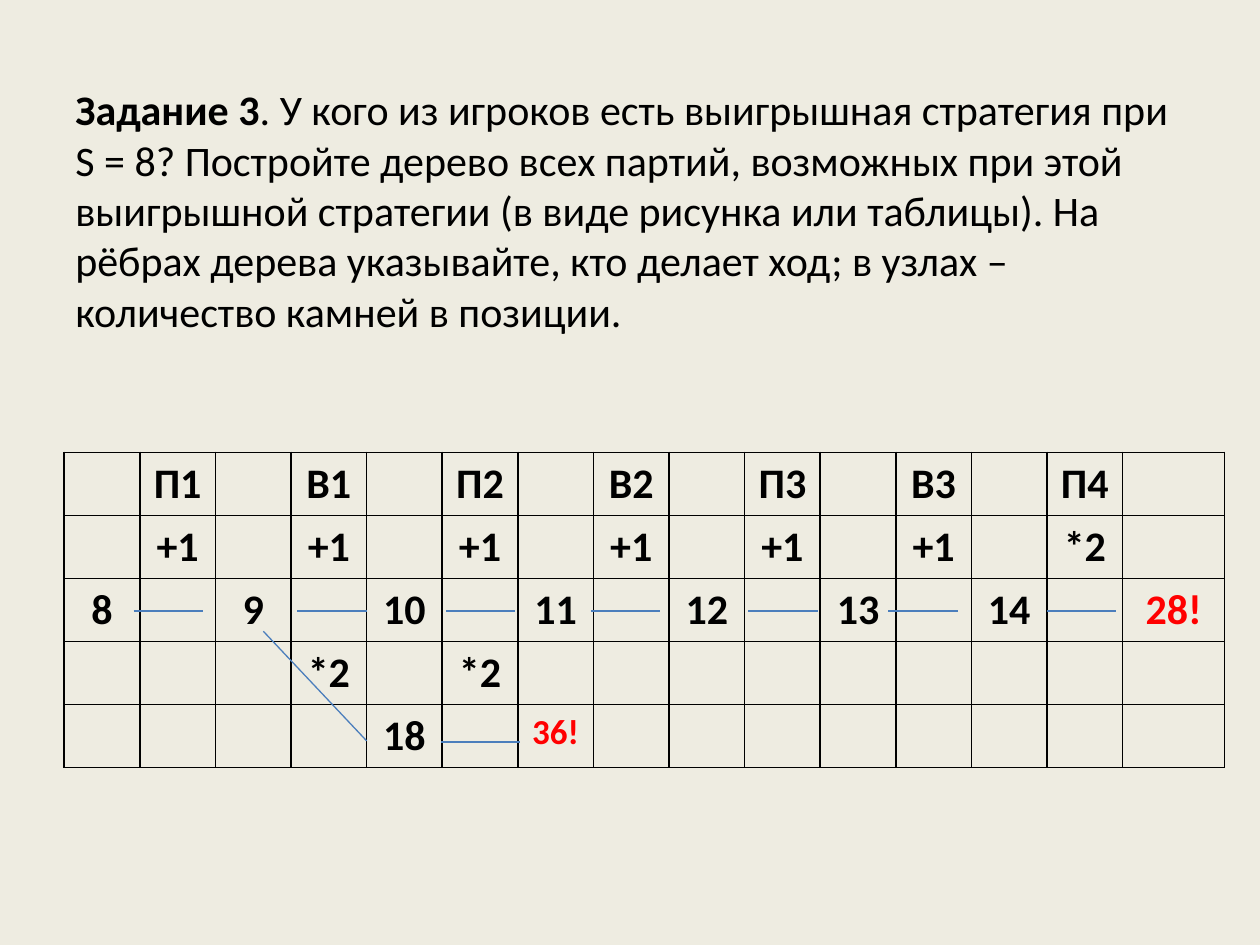
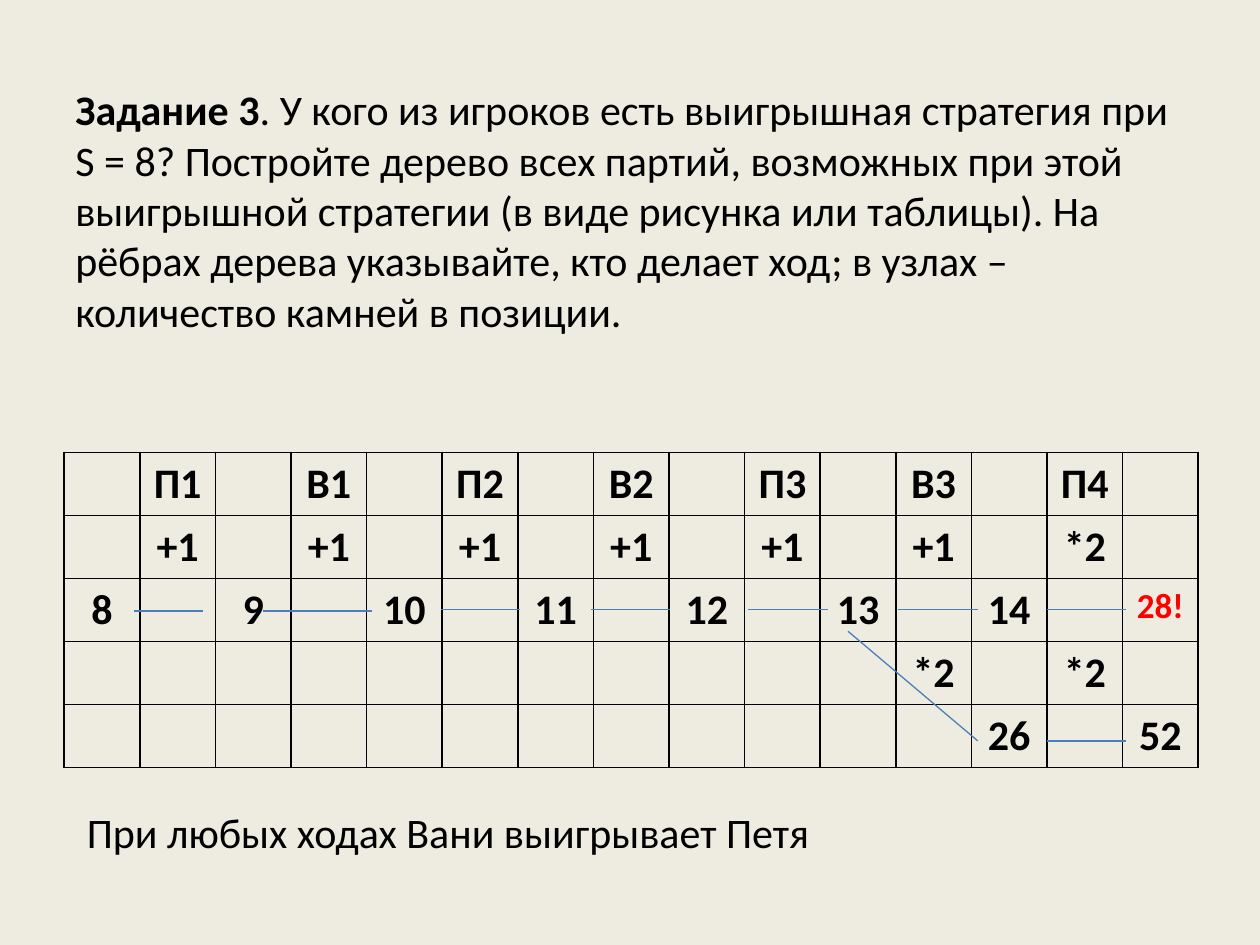
from lxml import etree
from pptx import Presentation
from pptx.dml.color import RGBColor
from pptx.enum.shapes import MSO_CONNECTOR
from pptx.enum.text import MSO_ANCHOR as Anchor, PP_ALIGN as Align
from pptx.oxml.ns import qn
from pptx.util import Inches, Pt

FONT, BLACK, RED, BLUE, CREAM = "Calibri", "000000", "FF0000", "4B7EBC", "EEECE1"
TASK = [
    ("Задание 3", True),
    (". У кого из игроков есть выигрышная стратегия при S = 8? Постройте дерево "
     "всех партий, возможных при этой выигрышной стратегии (в виде рисунка или "
     "таблицы). На рёбрах дерева указывайте, кто делает ход; в узлах – "
     "количество камней в позиции.", False),
]
TURNS = ["П1", "В1", "П2", "В2", "П3", "В3", "П4"]
MOVES = ["+1"] * 6 + ["*2"]
STONES = ["8", "9", "10", "11", "12", "13", "14", "28!"]
COLUMNS, ROWS, COLUMN_WIDTH, ROW_HEIGHT = 15, 5, 0.6, 0.5
TABLE_LEFT, TABLE_TOP = 0.51, 3.59

GAMES = [
    {
        "branch": {(3, 3): "*2", (3, 5): "*2", (4, 4): "18", (4, 6): "36!"},
        "small": {"36!"},
        "last_width": 0.81,
        "edges": [(x, 4.85, x + 0.55, 4.85)
                  for x in (1.06, 2.36, 3.54, 4.69, 5.94, 7.05, 8.31)]
                 + [(2.09, 5.01, 2.91, 5.88), (3.5, 5.89, 4.13, 5.89)],
        "conclusion": "",
    },
    {
        "branch": {(3, 11): "*2", (3, 13): "*2", (4, 12): "26", (4, 14): "52"},
        "small": {"28!"},
        "last_width": COLUMN_WIDTH,
        "edges": [(1.06, 4.85, 1.61, 4.85), (2.09, 4.85, 2.95, 4.85)]
                 + [(x, 4.84, x + 0.63, 4.84) for x in (3.5, 4.69, 5.94, 7.13, 8.31)]
                 + [(8.31, 5.88, 8.94, 5.88), (6.73, 5.01, 7.76, 5.88)],
        "conclusion": "При любых ходах Вани выигрывает Петя",
    },
]


def rgb(color):
    return RGBColor.from_string(color)


def write(frame, text, size=24, color=BLACK, bold=False, align=Align.LEFT):
    paragraph = frame.paragraphs[0]
    paragraph.alignment = align
    run = paragraph.add_run()
    run.text = text
    run.font.name, run.font.size, run.font.bold = FONT, Pt(size), bold
    run.font.color.rgb = rgb(color)


def add_frame(slide, left, top, width, height):
    frame = slide.shapes.add_textbox(*map(Inches, (left, top, width, height))).text_frame
    frame.word_wrap = True
    return frame


def add_task(slide):
    frame = add_frame(slide, 0.5, 0.3, 9, 3.13)
    frame.vertical_anchor = Anchor.MIDDLE
    frame.margin_bottom = Inches(0.45)
    for text, bold in TASK:
        write(frame, text, bold=bold)


def outline(cell):
    cell.fill.background()
    properties = cell._tc.get_or_add_tcPr()
    for place, side in enumerate(("lnL", "lnR", "lnT", "lnB")):
        border = etree.Element(qn(f"a:{side}"), w=str(Pt(1)))
        fill = etree.SubElement(border, qn("a:solidFill"))
        etree.SubElement(fill, qn("a:srgbClr"), val=BLACK)
        properties.insert(place, border)


def add_game_table(slide, game):
    width = COLUMN_WIDTH * (COLUMNS - 1) + game["last_width"]
    table = slide.shapes.add_table(
        ROWS, COLUMNS, Inches(TABLE_LEFT), Inches(TABLE_TOP),
        Inches(width), Inches(ROWS * ROW_HEIGHT)).table
    table.first_row = table.horz_banding = False
    for column in table.columns:
        column.width = Inches(COLUMN_WIDTH)
    table.columns[COLUMNS - 1].width = Inches(game["last_width"])

    entries = dict(game["branch"])
    for row, (start, values) in enumerate([(1, TURNS), (1, MOVES), (0, STONES)]):
        entries.update({(row, start + 2 * i): value for i, value in enumerate(values)})
    for row in range(ROWS):
        for column in range(COLUMNS):
            cell = table.cell(row, column)
            outline(cell)
            text = entries.get((row, column))
            if text:
                write(cell.text_frame, text, bold=True, align=Align.CENTER,
                      size=20 if text in game["small"] else 24,
                      color=RED if text.endswith("!") else BLACK)


def add_edge(slide, ends):
    edge = slide.shapes.add_connector(MSO_CONNECTOR.STRAIGHT, *map(Inches, ends))
    edge.line.color.rgb = rgb(BLUE)
    edge.line.width = Pt(0.75)
    etree.SubElement(edge._element.spPr, qn("a:effectLst"))


def main():
    deck = Presentation()
    deck.slide_width, deck.slide_height = Inches(10), Inches(7.5)
    for game in GAMES:
        slide = deck.slides.add_slide(deck.slide_layouts[6])
        slide.background.fill.solid()
        slide.background.fill.fore_color.rgb = rgb(CREAM)
        add_task(slide)
        add_game_table(slide, game)
        for ends in game["edges"]:
            add_edge(slide, ends)
        if game["conclusion"]:
            write(add_frame(slide, 0.59, 6.35, 8.98, 0.5), game["conclusion"])
    deck.save("out.pptx")


if __name__ == "__main__":
    main()
